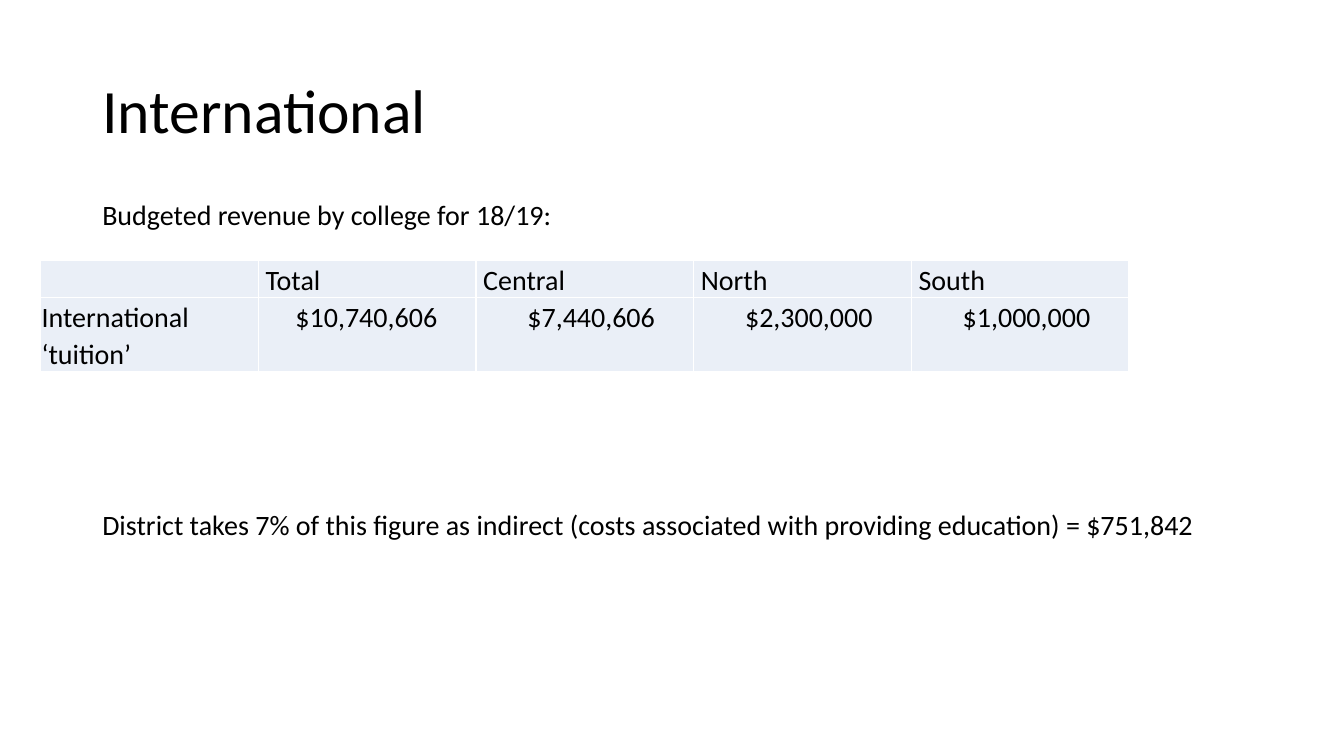
from pptx import Presentation
from pptx.dml.color import RGBColor as Rgb
from pptx.enum.text import MSO_ANCHOR as Anchor, PP_ALIGN as Align
from pptx.oxml import parse_xml
from pptx.oxml.ns import nsdecls
from pptx.util import Pt

COLORS = {"text": "000000", "cell": "EAEFF7", "border": "FFFFFF"}
ROWS = [
    ["", "Total", "Central", "North", "South"],
    ["International ‘tuition’", "$10,740,606", "$7,440,606",
     "$2,300,000", "$1,000,000"],
]


def style(para, size, spacing):
    para.line_spacing = spacing
    for run in para.runs:
        run.font.size = Pt(size)
        run.font.name = "Calibri"
        run.font.color.rgb = Rgb.from_string(COLORS["text"])


def add_title(slide, box, text):
    title = slide.shapes.title
    title.left, title.top, title.width, title.height = map(Pt, box)
    frame = title.text_frame
    frame.text = text
    frame.vertical_anchor = Anchor.MIDDLE
    para = frame.paragraphs[0]
    para.alignment = Align.LEFT
    style(para, 44, 0.9)


def add_body(slide, box, intro, note, gap):
    """Place the intro above the table and the note below it, gap apart."""
    frame = slide.shapes.add_textbox(*map(Pt, box)).text_frame
    frame.word_wrap = True
    frame.text = intro
    last = frame.add_paragraph()
    last.text = note
    last.space_before = Pt(gap)
    for para in frame.paragraphs:
        style(para, 20, 0.9)


def add_borders(cell):
    props = cell._tc.get_or_add_tcPr()
    for i, side in enumerate(("lnL", "lnR", "lnT", "lnB")):
        props.insert(i, parse_xml(
            f'<a:{side} {nsdecls("a")} w="{Pt(1)}"><a:solidFill>'
            f'<a:srgbClr val="{COLORS["border"]}"/></a:solidFill></a:{side}>'))


def fill_cell(cell, text, left, right, align):
    cell.fill.solid()
    cell.fill.fore_color.rgb = Rgb.from_string(COLORS["cell"])
    cell.margin_left, cell.margin_right = Pt(left), Pt(right)
    cell.margin_top, cell.margin_bottom = Pt(0.7), Pt(0)
    cell.text = text
    para = cell.text_frame.paragraphs[0]
    para.alignment = align
    para.space_after = Pt(8)
    style(para, 20, 1.07)
    add_borders(cell)


def add_revenue(slide, box, rows, heights):
    shape = slide.shapes.add_table(len(rows), len(rows[0]), *map(Pt, box))
    table = shape.table
    for col in table.columns:
        col.width = Pt(box[2] / len(rows[0]))
    for r, (texts, height) in enumerate(zip(rows, heights)):
        table.rows[r].height = Pt(height)
        for c, text in enumerate(texts):
            if r and c:
                inset = (0.7, 27.5, Align.RIGHT)
            else:
                inset = (5.2 if c else 0.7, 0.7, Align.LEFT)
            fill_cell(table.cell(r, c), text, *inset)


def main():
    deck = Presentation()
    deck.slide_width, deck.slide_height = Pt(960), Pt(540)
    slide = deck.slides.add_slide(deck.slide_layouts[5])
    add_title(slide, (66, 28.75, 828, 104.4), "International")
    add_body(slide, (66, 140.4, 828, 342.7),
             "Budgeted revenue by college for 18/19:",
             "District takes 7% of this figure as indirect (costs associated "
             "with providing education) = $751,842", 200)
    add_revenue(slide, (29, 186, 777.5, 79.5), ROWS, (26.6, 52.9))
    deck.save("out.pptx")


if __name__ == "__main__":
    main()
